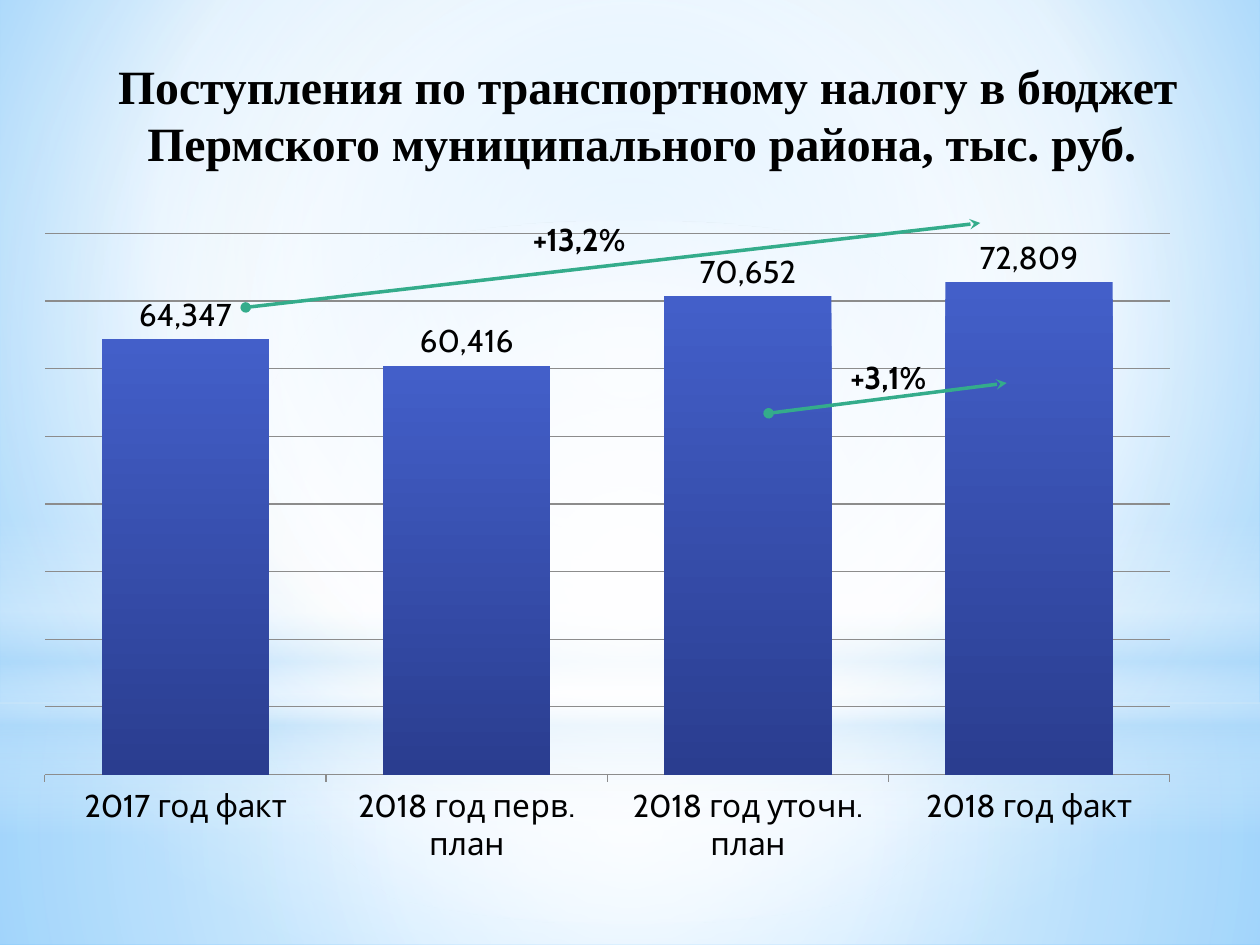
from lxml import etree
from pptx import Presentation
from pptx import util as u
from pptx.chart.data import CategoryChartData
from pptx.dml.color import RGBColor
from pptx.enum import chart as ch, shapes, text
from pptx.oxml import parse_xml
from pptx.oxml.ns import nsdecls, qn

WIDTH, HEIGHT = 10, 7.5
BODY_FONT, TITLE_FONT = "Cabin", "Times New Roman"
COLORS = {
    "text": "000000", "white": "FFFFFF", "mist": "B4DCFA",
    "sky": "9ED5FF", "deep_sky": "5BB9FF",
    "bar_top": "435FC9", "bar_bottom": "2A3D8F",
    "grid": "8C8C8C", "growth": "34AC8B",
}
CENTER = (50, 50, 50, 50)
RECEIPTS = {
    "2017 год факт": 64347,
    "2018 год перв. план": 60416,
    "2018 год уточн. план": 70652,
    "2018 год факт": 72809,
}


def rgb(name):
    return RGBColor.from_string(COLORS[name])


def inches(box):
    return [u.Inches(length) for length in box]


def gradient(stops, focus=None, angle=90):
    """Gradient fill from (position %, colour, opacity %); radial if focus is given."""
    stop_xml = "".join(
        f'<a:gs pos="{pos * 1000}"><a:srgbClr val="{COLORS[color]}">'
        f'<a:alpha val="{opacity * 1000}"/></a:srgbClr></a:gs>'
        for pos, color, opacity in stops)
    if focus:
        sides = " ".join(f'{s}="{v * 1000}"' for s, v in zip("ltrb", focus))
        course = f'<a:path path="circle"><a:fillToRect {sides}/></a:path>'
    else:
        course = f'<a:lin ang="{angle * 60000}" scaled="0"/>'
    return parse_xml(f'<a:gradFill {nsdecls("a")} rotWithShape="1">'
                     f'<a:gsLst>{stop_xml}</a:gsLst>{course}</a:gradFill>')


def set_gradient(fill_format, properties, fill):
    fill_format.solid()
    properties.replace(properties.find(qn("a:solidFill")), fill)


def style_font(font, size, name=BODY_FONT, bold=False):
    font.size, font.name, font.bold = u.Pt(size), name, bold
    font.color.rgb = rgb("text")


def add_backdrop(slide):
    background = slide.background.fill
    background.solid()
    bg_pr = slide.element.cSld.find(qn("p:bg")).find(qn("p:bgPr"))
    set_gradient(background, bg_pr, gradient(
        [(0, "sky", 100), (60, "white", 100), (100, "deep_sky", 100)], (20, 10, 20, 60)))

    horizon = HEIGHT * 0.744
    rect, oval = shapes.MSO_SHAPE.RECTANGLE, shapes.MSO_SHAPE.OVAL
    layers = [
        (rect, (0, horizon, WIDTH, HEIGHT - horizon), CENTER,
         [(0, "white", 91), (37, "white", 76), (100, "mist", 79)]),
        (rect, (0, 0, WIDTH, horizon), CENTER,
         [(0, "white", 89), (48, "white", 62), (100, "mist", 79)]),
        (rect, (0, HEIGHT * 0.55, WIDTH, HEIGHT / 3), None,
         [(0, "white", 0), (29, "white", 30), (45, "mist", 40),
          (55, "white", 26), (65, "mist", 60), (100, "white", 0)]),
        (oval, (0, 1.75, WIDTH, horizon), CENTER,
         [(0, "white", 100), (56, "white", 0)]),
    ]
    for preset, box, focus, stops in layers:
        layer = slide.shapes.add_shape(preset, *inches(box))
        layer.shadow.inherit = False
        layer.line.fill.background()
        set_gradient(layer.fill, layer.element.spPr, gradient(stops, focus))


def place_title(slide, box):
    title = slide.shapes.title
    slide.shapes.element.append(title.element)  # in front of the backdrop
    title.left, title.top, title.width, title.height = inches(box)
    frame = title.text_frame
    frame.text = (" Поступления по транспортному налогу в бюджет "
                  "Пермского муниципального района, тыс. руб.")
    frame.word_wrap = True
    frame.auto_size = text.MSO_AUTO_SIZE.NONE
    frame.vertical_anchor = text.MSO_ANCHOR.MIDDLE
    frame.paragraphs[0].alignment = text.PP_ALIGN.CENTER
    style_font(frame.paragraphs[0].runs[0].font, 27.3, TITLE_FONT, True)


def fix_plot_area(chart, shares):
    """Pin the inner plot area to x, y, w, h shares of the chart."""
    plot_area = chart.element.chart.plotArea
    for old in plot_area.findall(qn("c:layout")):
        plot_area.remove(old)
    layout = etree.Element(qn("c:layout"))
    manual = etree.SubElement(layout, qn("c:manualLayout"))
    settings = [("layoutTarget", "inner"), ("xMode", "edge"), ("yMode", "edge"),
                *zip("xywh", shares)]
    for tag, value in settings:
        etree.SubElement(manual, qn(f"c:{tag}")).set("val", str(value))
    plot_area.insert(0, layout)


def add_receipts_chart(slide, box):
    data = CategoryChartData()
    data.categories = list(RECEIPTS)
    data.add_series("Series 1", list(RECEIPTS.values()))
    chart = slide.shapes.add_chart(
        ch.XL_CHART_TYPE.COLUMN_CLUSTERED, *inches(box), data).chart
    chart.has_legend = chart.has_title = False
    style_font(chart.font, 18)
    fix_plot_area(chart, (0, 0.06, 0.97, 0.8))

    amounts = chart.value_axis
    amounts.minimum_scale, amounts.maximum_scale, amounts.major_unit = 0, 80000, 10000
    amounts.visible = False
    amounts.has_major_gridlines = True
    years = chart.category_axis
    years.major_tick_mark = ch.XL_TICK_MARK.OUTSIDE
    for line in (amounts.major_gridlines.format.line, years.format.line):
        line.color.rgb = rgb("grid")
        line.width = u.Pt(0.75)

    plot = chart.plots[0]
    plot.gap_width = 68
    plot.vary_by_categories = False
    plot.has_data_labels = True
    labels = plot.data_labels
    labels.show_value = True
    labels.number_format, labels.number_format_is_linked = "#,##0", False
    labels.position = ch.XL_LABEL_POSITION.OUTSIDE_END
    style_font(labels.font, 18)
    bars = plot.series[0]
    bars.invert_if_negative = False
    set_gradient(bars.format.fill, bars.format.fill._xPr,
                 gradient([(0, "bar_top", 100), (100, "bar_bottom", 100)]))


def add_growth(slide, start, end, label, label_box, alignment):
    arrow = slide.shapes.add_connector(
        shapes.MSO_CONNECTOR.STRAIGHT, *inches((*start, *end)))
    arrow.line.color.rgb = rgb("growth")
    arrow.line.width = u.Pt(2)
    line = arrow.line._get_or_add_ln()
    for tag, kind in (("headEnd", "oval"), ("tailEnd", "stealth")):
        etree.SubElement(line, qn(f"a:{tag}"), type=kind)
    etree.SubElement(arrow.element.spPr, qn("a:effectLst"))

    frame = slide.shapes.add_textbox(*inches(label_box)).text_frame
    frame.text = label
    frame.word_wrap = True
    frame.auto_size = text.MSO_AUTO_SIZE.SHAPE_TO_FIT_TEXT
    frame.paragraphs[0].alignment = alignment
    style_font(frame.paragraphs[0].runs[0].font, 18, bold=True)


def main():
    deck = Presentation()
    deck.slide_width, deck.slide_height = inches((WIDTH, HEIGHT))
    slide = deck.slides.add_slide(deck.slide_layouts[5])
    add_backdrop(slide)
    place_title(slide, (0.35, 0.29, 9.49, 1.23))
    add_receipts_chart(slide, (0.35, 1.53, 9.21, 5.37))
    add_growth(slide, (1.95, 2.44), (7.78, 1.77), "+13,2%",
               (4.13, 1.7, 1.18, 0.4), text.PP_ALIGN.LEFT)
    add_growth(slide, (6.1, 3.28), (7.99, 3.04), "+3,1%",
               (6.34, 2.79, 1.42, 0.4), text.PP_ALIGN.CENTER)
    deck.save("out.pptx")


if __name__ == "__main__":
    main()
